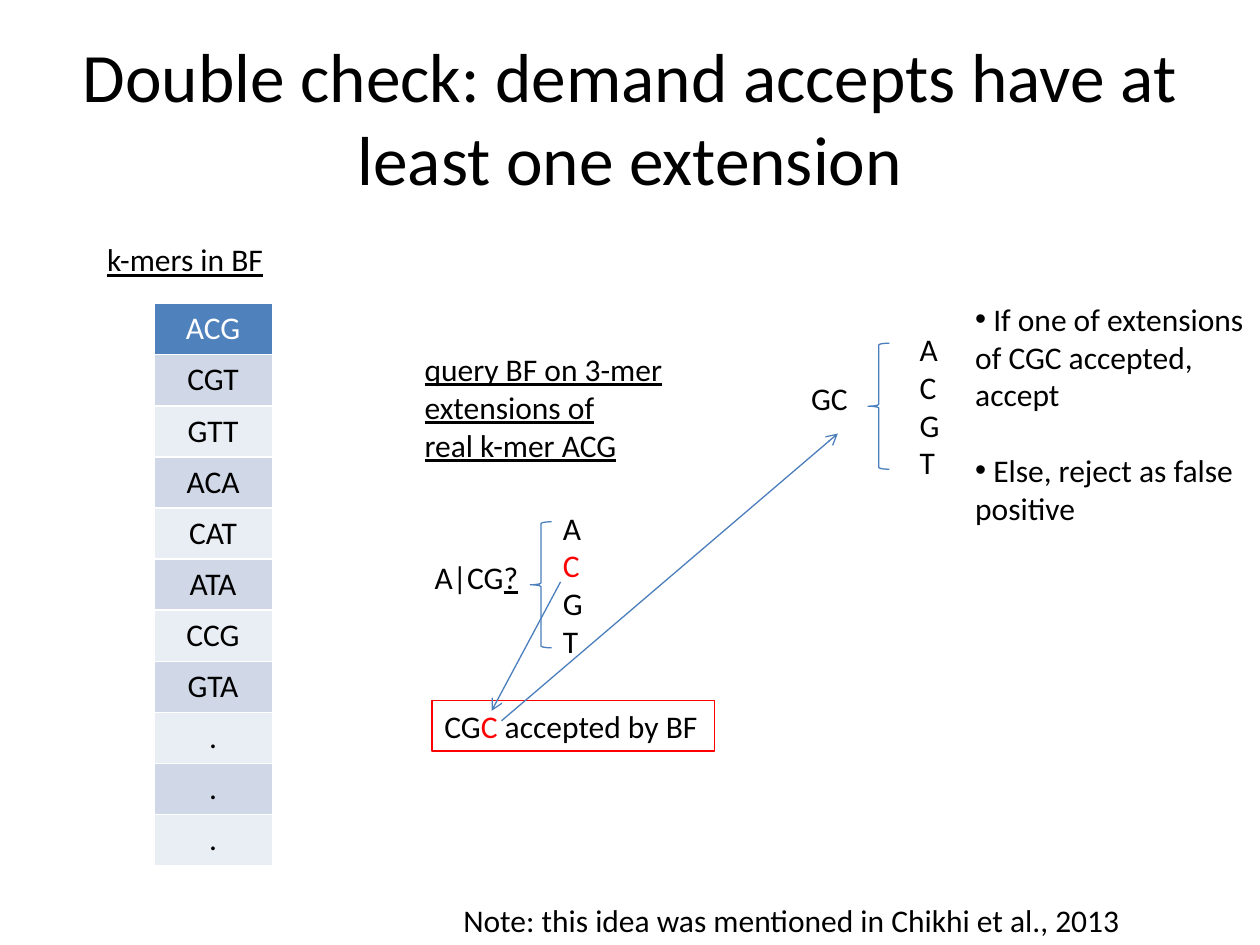
from dataclasses import dataclass

from lxml.etree import SubElement
from pptx import Presentation
from pptx.dml.color import RGBColor
from pptx.enum.shapes import MSO_CONNECTOR, MSO_SHAPE
from pptx.enum.text import MSO_ANCHOR, MSO_AUTO_SIZE, PP_ALIGN
from pptx.oxml.ns import qn
from pptx.util import Cm, Pt


@dataclass(frozen=True)
class Theme:
    font: str = "Calibri"
    title_size: float = 39.6
    body_size: float = 18
    line_width: float = 0.75
    black: RGBColor = RGBColor(0x00, 0x00, 0x00)
    white: RGBColor = RGBColor(0xFF, 0xFF, 0xFF)
    red: RGBColor = RGBColor(0xFF, 0x00, 0x00)
    line: RGBColor = RGBColor(0x4B, 0x7E, 0xBC)
    header: RGBColor = RGBColor(0x4F, 0x81, 0xBD)
    bands: tuple = (RGBColor(0xD0, 0xD8, 0xE8), RGBColor(0xE9, 0xED, 0xF4))


THEME = Theme()
KMERS = ["ACG", "CGT", "GTT", "ACA", "CAT", "ATA", "CCG", "GTA", ".", ".", "."]
BASES = "ACGT"


def format_span(span, size=THEME.body_size, color=THEME.black, underline=None):
    span.font.name = THEME.font
    span.font.size = Pt(size)
    span.font.color.rgb = color
    span.font.underline = underline


def add_title(page, text):
    title = page.shapes.title
    title.left, title.top, title.width, title.height = Cm(1.27), Cm(0.76), Cm(22.86), Cm(3.18)
    frame = title.text_frame
    frame.text = text
    frame.vertical_anchor = MSO_ANCHOR.MIDDLE
    frame.paragraphs[0].alignment = PP_ALIGN.CENTER
    format_span(frame.paragraphs[0].runs[0], THEME.title_size)


def add_text(page, left, top, width, height, lines, wrap=False, underline=None):
    """Add a text box; a line is a string or a list of (text, style) spans."""
    box = page.shapes.add_textbox(Cm(left), Cm(top), Cm(width), Cm(height))
    frame = box.text_frame
    frame.word_wrap = wrap
    frame.auto_size = MSO_AUTO_SIZE.SHAPE_TO_FIT_TEXT
    for index, line in enumerate(lines):
        para = frame.add_paragraph() if index else frame.paragraphs[0]
        spans = [(line, {})] if isinstance(line, str) else line
        for text, style in spans:
            span = para.add_run()
            span.text = text
            format_span(span, **{"underline": underline, **style})
    return box


def add_bullet(para):
    properties = para._p.get_or_add_pPr()
    SubElement(properties, qn("a:buFont"), typeface="Arial")
    SubElement(properties, qn("a:buChar"), char="•")


def add_kmer_table(page):
    row_height = Cm(1.02)
    frame = page.shapes.add_table(
        len(KMERS), 1, Cm(3.1), Cm(6.12), Cm(2.39), row_height * len(KMERS))
    for index, kmer in enumerate(KMERS):
        cell = frame.table.cell(index, 0)
        cell.text = kmer
        cell.fill.solid()
        cell.fill.fore_color.rgb = THEME.bands[(index - 1) % 2] if index else THEME.header
        para = cell.text_frame.paragraphs[0]
        para.alignment = PP_ALIGN.CENTER
        format_span(para.runs[0], color=THEME.black if index else THEME.white)
        para.runs[0].font.bold = False


def add_brace(page, left, top):
    brace = page.shapes.add_shape(MSO_SHAPE.LEFT_BRACE, Cm(left), Cm(top), Cm(0.43), Cm(2.54))
    brace.shadow.inherit = False
    brace.fill.background()
    brace.line.color.rgb = THEME.line
    brace.line.width = Pt(THEME.line_width)


def add_extensions(page, top, prefix, prefix_left, prefix_width, brace_left, bases_left,
                   accepted=None):
    """Add a prefix, a brace and the four bases that can follow the prefix."""
    bases = [[(base, {"color": THEME.red if base == accepted else THEME.black})]
             for base in BASES]
    add_text(page, prefix_left, top + 0.99, prefix_width, 1.02, [prefix])
    add_text(page, bases_left, top, 0.91, 3.33, bases)
    add_brace(page, brace_left, top + 0.39)


def add_arrow(page, start, end):
    arrow = page.shapes.add_connector(
        MSO_CONNECTOR.STRAIGHT, *(Cm(value) for value in start + end))
    arrow.line.color.rgb = THEME.line
    arrow.line.width = Pt(THEME.line_width)
    SubElement(arrow.line._get_or_add_ln(), qn("a:tailEnd"), type="arrow")
    SubElement(arrow._element.spPr, qn("a:effectLst"))


def add_rules(page):
    box = add_text(page, 19.41, 5.92, 5.99, 4.88, [
        " If one of extensions", "of CGC accepted,", "accept",
        " Else, reject as false", "positive"])
    paras = box.text_frame.paragraphs
    paras[3].space_before = Pt(21.6)
    for para in (paras[0], paras[3]):
        add_bullet(para)


def main():
    deck = Presentation()
    deck.slide_width, deck.slide_height = Cm(25.4), Cm(19.05)
    page = deck.slides.add_slide(deck.slide_layouts[5])

    add_title(page, "Double check: demand accepts have at least one extension")
    add_kmer_table(page)
    add_text(page, 1.91, 4.72, 3.71, 1.02, ["k-mers in BF"], underline=True)

    query = add_text(page, 8.31, 6.93, 5.79, 2.57,
                     ["query BF on 3-mer extensions of", "real k-mer ACG"],
                     wrap=True, underline=True)
    query.fill.solid()
    query.fill.fore_color.rgb = THEME.white
    add_extensions(page, 10.13, [("A|CG", {}), ("?", {"underline": True})],
                   8.51, 2.21, 10.69, 11.1, accepted="C")

    verdict = add_text(page, 8.71, 14.12, 5.69, 1.02, [
        [("CG", {}), ("C", {"color": THEME.red}), (" accepted by BF", {})]])
    verdict.line.color.rgb = THEME.red
    verdict.line.width = Pt(THEME.line_width)
    add_arrow(page, (11.3, 11.73), (9.91, 14.33))

    add_extensions(page, 6.53, "GC", 16.1, 1.27, 17.5, 18.29)
    add_arrow(page, (10.11, 14.53), (16.89, 8.74))
    add_rules(page)
    add_text(page, 9.09, 18.03, 13.92, 1.02,
             ["Note: this idea was mentioned in Chikhi et al., 2013"])
    deck.save("out.pptx")


if __name__ == "__main__":
    main()
